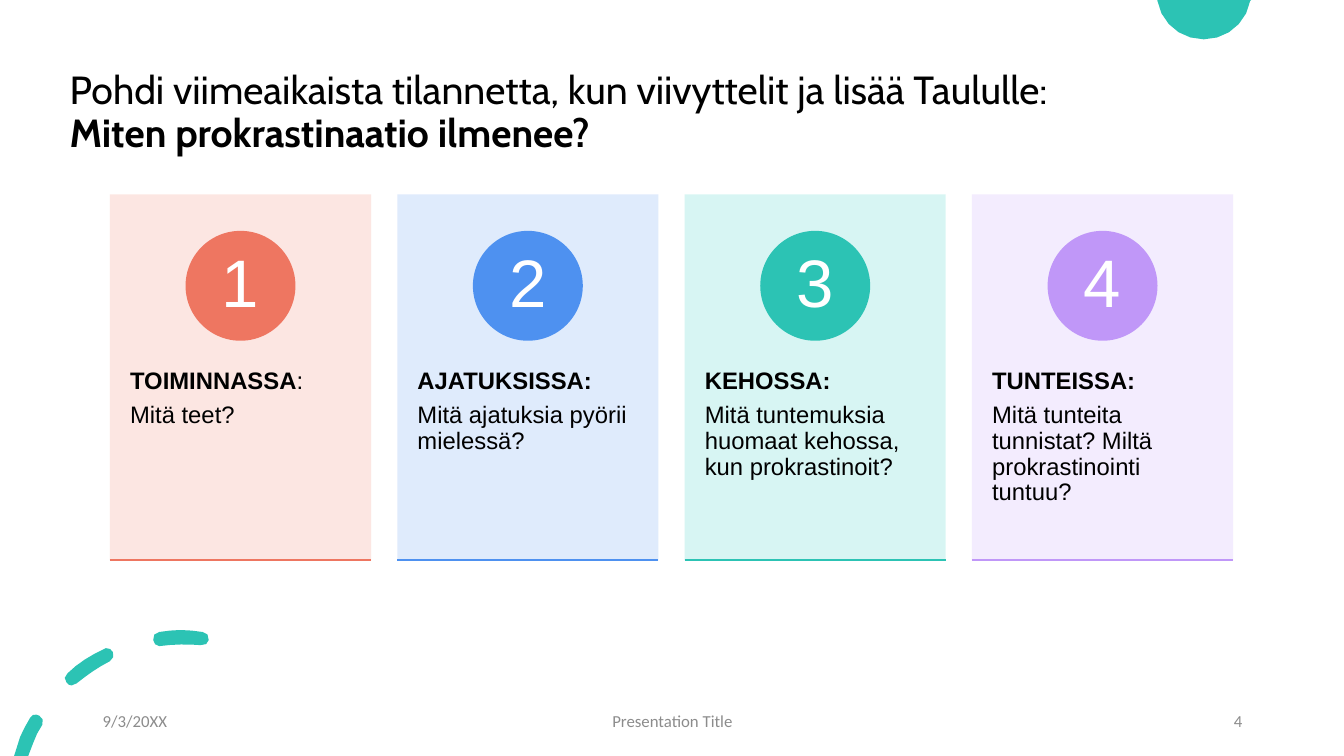
import math

from lxml import etree
from pptx import Presentation
from pptx.dml.color import RGBColor
from pptx.enum import shapes, text
from pptx.oxml import ns
from pptx.util import Inches, Pt

BLACK = RGBColor(0x00, 0x00, 0x00)
WHITE = RGBColor(0xFF, 0xFF, 0xFF)
GREY = RGBColor(0x8C, 0x8C, 0x8C)
CORAL = RGBColor(0xEE, 0x76, 0x61)
BLUE = RGBColor(0x4E, 0x91, 0xF0)
TEAL = RGBColor(0x2C, 0xC3, 0xB4)
VIOLET = RGBColor(0xC0, 0x97, 0xF8)
PALE_CORAL = RGBColor(0xFC, 0xE4, 0xDF)
PALE_BLUE = RGBColor(0xDC, 0xE9, 0xFC)
PALE_TEAL = RGBColor(0xD3, 0xF5, 0xF2)
PALE_VIOLET = RGBColor(0xF2, 0xEA, 0xFE)

LEFT, CENTER, RIGHT = text.PP_ALIGN.LEFT, text.PP_ALIGN.CENTER, text.PP_ALIGN.RIGHT
TOP, MIDDLE = text.MSO_ANCHOR.TOP, text.MSO_ANCHOR.MIDDLE

# Outlines in inches: a start point, then lines (2 numbers) or cubic curves (6 numbers)
CORNER_DISC = [
    [(11.48, 0), (12.41, 0), (12.4, 0.01), (12.36, 0.23, 12.17, 0.39, 11.94, 0.39),
     (11.71, 0.39, 11.52, 0.23, 11.48, 0.01)],
]
DASHED_ARC = [
    [(0.36, 7.09), (0.34, 7.08, 0.31, 7.1, 0.3, 7.12), (0.26, 7.18, 0.23, 7.25, 0.2, 7.31),
     (0.14, 7.5), (0.28, 7.5), (0.33, 7.37), (0.35, 7.31, 0.38, 7.25, 0.42, 7.19),
     (0.44, 7.16, 0.42, 7.11, 0.39, 7.1), (0.36, 7.09)],
    [(1.05, 6.43), (1.03, 6.44), (0.9, 6.5, 0.77, 6.58, 0.67, 6.68),
     (0.64, 6.7, 0.63, 6.75, 0.66, 6.77), (0.67, 6.79, 0.69, 6.8, 0.71, 6.8),
     (0.76, 6.78), (0.86, 6.7, 0.97, 6.62, 1.09, 6.56),
     (1.12, 6.54, 1.14, 6.5, 1.12, 6.47), (1.11, 6.44, 1.08, 6.43, 1.05, 6.43)],
    [(1.79, 6.25), (1.72, 6.25, 1.65, 6.26, 1.58, 6.27), (1.54, 6.27, 1.51, 6.31, 1.52, 6.35),
     (1.52, 6.38, 1.55, 6.41, 1.58, 6.41), (1.73, 6.39, 1.86, 6.39, 1.99, 6.4),
     (2.03, 6.41, 2.07, 6.38, 2.07, 6.35), (2.08, 6.31, 2.05, 6.27, 2.01, 6.27),
     (1.94, 6.26, 1.86, 6.25, 1.79, 6.25)],
]

# Each heading is a list of (text, bold) runs
CARDS = [
    ([("TOIMINNASSA", True), (":", False)], "Mitä teet?", CORAL, PALE_CORAL),
    ([("AJATUKSISSA:", True)], "Mitä ajatuksia pyörii mielessä?", BLUE, PALE_BLUE),
    ([("KEHOSSA:", True)], "Mitä tuntemuksia huomaat kehossa, kun prokrastinoit?",
     TEAL, PALE_TEAL),
    ([("TUNTEISSA:", True)], "Mitä tunteita tunnistat? Miltä prokrastinointi tuntuu?",
     VIOLET, PALE_VIOLET),
]
CARD_LEFT, CARD_TOP, CARD_WIDTH, CARD_HEIGHT = 1.09, 1.93, 2.59, 3.63
CARD_PITCH = 2.85
BADGE_SIZE = 1.09

FOOTERS = [
    ("9/3/20XX", 0.92, 3, LEFT),
    ("Presentation Title", 4.42, 4.5, CENTER),
    ("4", 9.42, 3, RIGHT),
]


def flatten(contour):
    """Turn a contour's lines and cubic curves into points in EMU."""
    points = [contour[0]]
    for segment in contour[1:]:
        if len(segment) == 2:
            points.append(segment)
            continue
        x0, y0 = points[-1]
        x1, y1, x2, y2, x3, y3 = segment
        steps = max(2, math.ceil(math.hypot(x3 - x0, y3 - y0) / 0.12))
        for step in range(1, steps + 1):
            t = step / steps
            a, b, c, d = (1 - t) ** 3, 3 * t * (1 - t) ** 2, 3 * t * t * (1 - t), t ** 3
            points.append((a * x0 + b * x1 + c * x2 + d * x3,
                           a * y0 + b * y1 + c * y2 + d * y3))
    return [(Inches(x), Inches(y)) for x, y in points]


class Deck:
    def __init__(self):
        self.prs = Presentation()
        self.prs.slide_width, self.prs.slide_height = Inches(13.33), Inches(7.5)
        self.slide = self.prs.slides.add_slide(self.prs.slide_layouts[5])
        self.shapes = self.slide.shapes

    def run(self, paragraph, words, size, font, color, bold=False):
        run = paragraph.add_run()
        run.text = words
        run.font.size, run.font.name, run.font.bold = Pt(size), font, bold
        run.font.color.rgb = color

    def fill(self, shape, color, opacity=100):
        shape.shadow.inherit = False
        shape.fill.solid()
        shape.fill.fore_color.rgb = color
        shape.line.fill.background()
        if opacity < 100:
            rgb = shape.fill._xPr.find(".//" + ns.qn("a:srgbClr"))
            etree.SubElement(rgb, ns.qn("a:alpha"), val=str(opacity * 1000))

    def title(self, lead, question):
        title = self.shapes.title
        title.left, title.top = Inches(0.59), Inches(0.4)
        title.width, title.height = Inches(11.5), Inches(1.45)
        frame = title.text_frame
        frame.auto_size = text.MSO_AUTO_SIZE.NONE
        frame.vertical_anchor = MIDDLE
        paragraph = frame.paragraphs[0]
        paragraph.alignment, paragraph.line_spacing = LEFT, 0.9
        self.run(paragraph, lead, 28, "Cabin", BLACK)
        paragraph.add_line_break()
        self.run(paragraph, question, 28, "Cabin", BLACK, True)

    def outline(self, contours, color):
        first, *others = [flatten(contour) for contour in contours]
        builder = self.shapes.build_freeform(*first[0])
        builder.add_line_segments(first[1:])
        for points in others:
            builder.move_to(*points[0])
            builder.add_line_segments(points[1:])
        self.fill(builder.convert_to_shape(), color)

    def preset(self, kind, left, top, width, height, color, opacity=100):
        shape = self.shapes.add_shape(
            kind, Inches(left), Inches(top), Inches(width), Inches(height))
        self.fill(shape, color, opacity)

    def rule(self, left, top, width, color):
        rule = self.shapes.add_connector(
            shapes.MSO_CONNECTOR.STRAIGHT,
            Inches(left), Inches(top), Inches(left + width), Inches(top))
        rule.line.color.rgb, rule.line.width = color, Pt(1.5)
        etree.SubElement(rule._element.spPr, ns.qn("a:effectLst"))

    def text_box(self, left, top, width, height, paragraphs, size, font, color,
                 align=LEFT, anchor=TOP, insets=(0.1, 0.05), spacing=1, after=0):
        """Add a box whose paragraphs are lists of (text, bold) runs."""
        frame = self.shapes.add_textbox(
            Inches(left), Inches(top), Inches(width), Inches(height)).text_frame
        frame.auto_size = text.MSO_AUTO_SIZE.NONE
        frame.word_wrap = True
        frame.vertical_anchor = anchor
        frame.margin_left = frame.margin_right = Inches(insets[0])
        frame.margin_top = frame.margin_bottom = Inches(insets[1])
        for index, runs in enumerate(paragraphs):
            paragraph = frame.add_paragraph() if index else frame.paragraphs[0]
            paragraph.alignment, paragraph.line_spacing = align, spacing
            paragraph.space_after = Pt(after)
            for words, bold in runs:
                self.run(paragraph, words, size, font, color, bold)

    def card(self, number, left, heading, question, accent, tint):
        self.preset(shapes.MSO_SHAPE.RECTANGLE, left, CARD_TOP, CARD_WIDTH, CARD_HEIGHT,
                    tint, opacity=90)
        self.text_box(left, 3.3, CARD_WIDTH, 2.18, [heading, [(question, False)]],
                      17, "Arial", BLACK, insets=(0.2, 0.36), spacing=0.9, after=6)
        badge_left = left + (CARD_WIDTH - BADGE_SIZE) / 2
        self.preset(shapes.MSO_SHAPE.OVAL, badge_left, 2.29, BADGE_SIZE, BADGE_SIZE, accent)
        self.text_box(badge_left + 0.16, 2.45, 0.77, 0.77, [[(str(number), False)]],
                      48, "Arial", WHITE, CENTER, MIDDLE, (0.08, 0.01), 0.9)
        self.rule(left, CARD_TOP + CARD_HEIGHT, CARD_WIDTH, accent)


def main():
    deck = Deck()
    deck.outline(CORNER_DISC, TEAL)
    deck.outline(DASHED_ARC, TEAL)
    deck.title("Pohdi viimeaikaista tilannetta, kun viivyttelit ja lisää Taululle:",
               "Miten prokrastinaatio ilmenee?")
    for index, card in enumerate(CARDS):
        deck.card(index + 1, CARD_LEFT + index * CARD_PITCH, *card)
    for words, left, width, align in FOOTERS:
        deck.text_box(left, 6.95, width, 0.4, [[(words, False)]],
                      12, "Calibri", GREY, align, MIDDLE)
    deck.prs.save("out.pptx")


if __name__ == "__main__":
    main()
